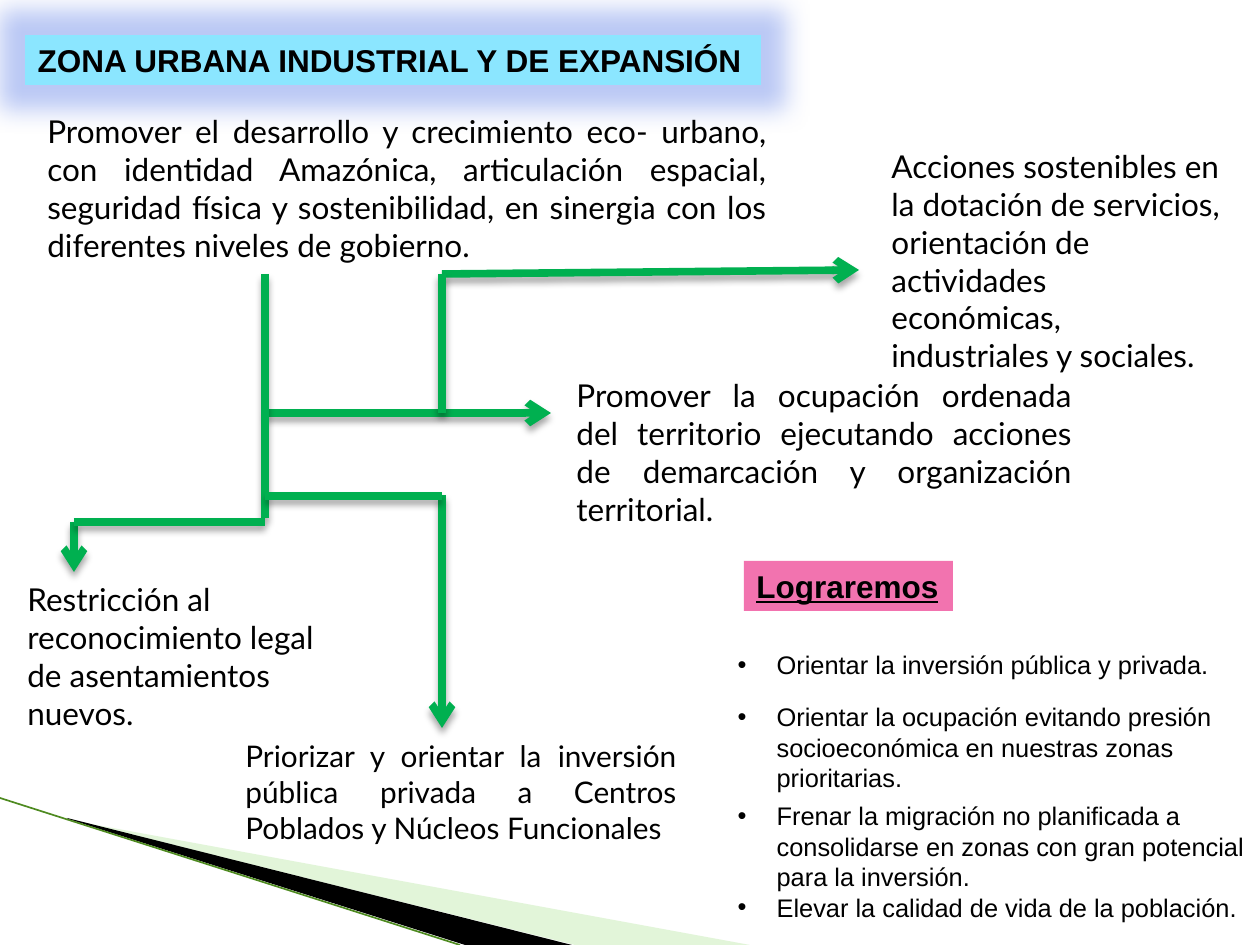
from pptx import Presentation
from pptx.dml.color import RGBColor
from pptx.enum.shapes import MSO_CONNECTOR, MSO_SHAPE
from pptx.enum.text import MSO_ANCHOR, MSO_AUTO_SIZE, PP_ALIGN
from pptx.oxml import parse_xml
from pptx.oxml.ns import nsdecls
from pptx.util import Emu, Pt

BLACK = RGBColor(0x00, 0x00, 0x00)
GREEN = RGBColor(0x00, 0xB0, 0x50)
PALE = RGBColor(0xB8, 0xE7, 0xA1)
OLIVE = RGBColor(0x4E, 0x8A, 0x20)
CYAN = RGBColor(0x8B, 0xE6, 0xFF)
PINK = RGBColor(0xF2, 0x73, 0xAF)
BLUE = RGBColor(0x55, 0x78, 0xE6)


def px(size):
    """Turn pixels into EMU."""
    return Emu(round(size * 914400 / 126))


def node(body):
    """Build a drawing element."""
    tag, rest = body[1:].split(">", 1)
    return parse_xml(f"<{tag} {nsdecls('a')}>{rest}")


def tint(color, alpha):
    """Give the XML of a clear colour."""
    return f'<a:srgbClr val="{color}"><a:alpha val="{alpha * 1000}"/></a:srgbClr>'


def write(para, text, size=18, font="Lato", bold=False, under=False, align=PP_ALIGN.LEFT, before=0):
    """Fill a paragraph with formatted text."""
    para.alignment = align
    para.space_before = Pt(before)
    run = para.add_run()
    run.text = text
    face = run.font
    face.name, face.size, face.bold, face.underline = font, Pt(size), bold, under
    face.color.rgb = BLACK


class Board:
    """Hold the style and the current slide."""

    def __init__(self, slide):
        self.slide = slide
        self.shapes = slide.shapes

    def place(self, shape, box, wrap=True):
        """Move a shape and set up its frame."""
        shape.left, shape.top, shape.width, shape.height = map(px, box)
        frame = shape.text_frame
        frame.word_wrap = wrap
        frame.auto_size = MSO_AUTO_SIZE.NONE
        frame.vertical_anchor = MSO_ANCHOR.TOP
        return frame

    def label(self, shape, text, box, fill, **style):
        """Write a bold heading on a filled box."""
        frame = self.place(shape, box, wrap=False)
        write(frame.paragraphs[0], text, font="Arial", bold=True, **style)
        shape.fill.solid()
        shape.fill.fore_color.rgb = fill
        shape.line.fill.background()

    def title(self, text, box):
        """Set the glowing title."""
        shape = self.shapes.title
        self.label(shape, text, box, CYAN)
        glow = f'<a:glow rad="{px(50)}">{tint(BLUE, 40)}</a:glow>'
        shape.element.spPr.append(node(f"<a:effectLst>{glow}</a:effectLst>"))

    def tag(self, text, box):
        """Add the pink heading."""
        shape = self.shapes.add_shape(MSO_SHAPE.RECTANGLE, *map(px, box))
        shape.shadow.inherit = False
        self.label(shape, text, box, PINK, under=True)

    def note(self, text, box, **style):
        """Add a text box."""
        frame = self.place(self.shapes.add_textbox(*map(px, box)), box)
        write(frame.paragraphs[0], text, **style)

    def bullets(self, items, box):
        """Fill the body with spaced bullets."""
        frame = self.place(self.slide.placeholders[1], box)
        for index, (text, gap) in enumerate(items):
            para = frame.add_paragraph() if index else frame.paragraphs[0]
            props = para._p.get_or_add_pPr()
            props.set("marL", str(px(39)))
            props.set("indent", str(-px(39)))
            write(para, text, size=14.5, font="Arial", before=gap)

    def wedge(self, points, fill, alpha=100):
        """Draw a corner wedge."""
        start, *rest = [(px(x), px(y)) for x, y in points]
        path = self.shapes.build_freeform(*start, scale=1.0)
        path.add_line_segments(rest, close=True)
        shape = path.convert_to_shape()
        shape.shadow.inherit = False
        shape.line.fill.background()
        shape.fill.solid()
        shape.fill.fore_color.rgb = fill
        hue = shape.element.spPr.find(".//" + "{http://schemas.openxmlformats.org/drawingml/2006/main}srgbClr")
        hue.append(node(f'<a:alpha><!-- --></a:alpha>'))
        hue[-1].set("val", str(alpha * 1000))

    def line(self, ends, color=GREEN, width=4.33, arrow=False, shade=True):
        """Draw a line, with or without head and shadow."""
        wire = self.shapes.add_connector(MSO_CONNECTOR.STRAIGHT, *map(px, ends))
        wire.line.color.rgb = color
        wire.line.width = Pt(width)
        if arrow:
            tail = node("<a:tailEnd></a:tailEnd>")
            tail.set("type", "arrow")
            wire.line._get_or_add_ln().append(tail)
        drop = ""
        if shade:
            drop = (f'<a:outerShdw blurRad="{Pt(4)}" dist="{Pt(3)}" dir="5400000" '
                    f'rotWithShape="0">{tint(BLACK, 35)}</a:outerShdw>')
        wire.element.spPr.append(node(f"<a:effectLst>{drop}</a:effectLst>"))


WEDGES = [
    ([(69, 820), (750, 945), (575, 945), (69, 819)], PALE, 40),
    ([(67, 818), (572, 945), (465, 945), (68, 819)], BLACK, 100),
]
NOTES = [
    ("Promover el desarrollo y crecimiento eco- urbano, con identidad Amazónica, articulación espacial, "
     "seguridad física y sostenibilidad, en sinergia con los diferentes niveles de gobierno.",
     (35, 106, 744, 165), {"align": PP_ALIGN.JUSTIFY}),
    ("Promover la ocupación ordenada del territorio ejecutando acciones de demarcación y "
     "organización territorial.", (564, 370, 520, 165), {"align": PP_ALIGN.JUSTIFY}),
    ("Acciones sostenibles en la dotación de servicios, orientación de actividades económicas, "
     "industriales y sociales.", (879, 141, 357, 204), {}),
    ("Restricción al reconocimiento legal de asentamientos nuevos.", (15, 574, 338, 127), {}),
    ("Priorizar y orientar la inversión pública privada a Centros Poblados y Núcleos Funcionales",
     (233, 732, 456, 121), {"align": PP_ALIGN.JUSTIFY, "size": 17}),
]
GOALS = [
    ("Orientar la inversión pública y privada.", 0),
    ("Orientar la ocupación evitando presión socioeconómica en nuestras zonas prioritarias.", 12.3),
    ("Frenar la migración no planificada a consolidarse en zonas con gran potencial para la inversión.", 4.4),
    ("Elevar la calidad de vida de la población.", 0),
]
LEFT, TRUNK, FORK = 74, 265, 442
ARROWS = [
    (TRUNK, 413, 551, 413),
    (FORK, 274, 859, 270),
    (LEFT, 522, LEFT, 572),
    (FORK, 495, FORK, 728),
]
STEMS = [
    (TRUNK, 274, TRUNK, 518),
    (LEFT, 522, TRUNK, 522),
    (TRUNK, 496, FORK, 496),
]


def main():
    """Build and save the slide."""
    deck = Presentation()
    deck.slide_width, deck.slide_height = px(1260), px(945)
    board = Board(deck.slides.add_slide(deck.slide_layouts[1]))
    board.title("ZONA URBANA INDUSTRIAL Y DE EXPANSIÓN", (25, 35, 736, 50))
    board.bullets(GOALS, (725, 643, 571, 286))
    for points, fill, alpha in WEDGES:
        board.wedge(points, fill, alpha)
    board.line((0, 798, 460, 945), OLIVE, 0.95, shade=False)
    for ends in ARROWS:
        board.line(ends, arrow=True)
    for ends in STEMS:
        board.line(ends)
    board.line((FORK, 274, FORK, 413), width=5)
    for text, box, style in NOTES:
        board.note(text, box, **style)
    board.tag("Lograremos", (744, 561, 209, 50))
    deck.save("out.pptx")


if __name__ == "__main__":
    main()
